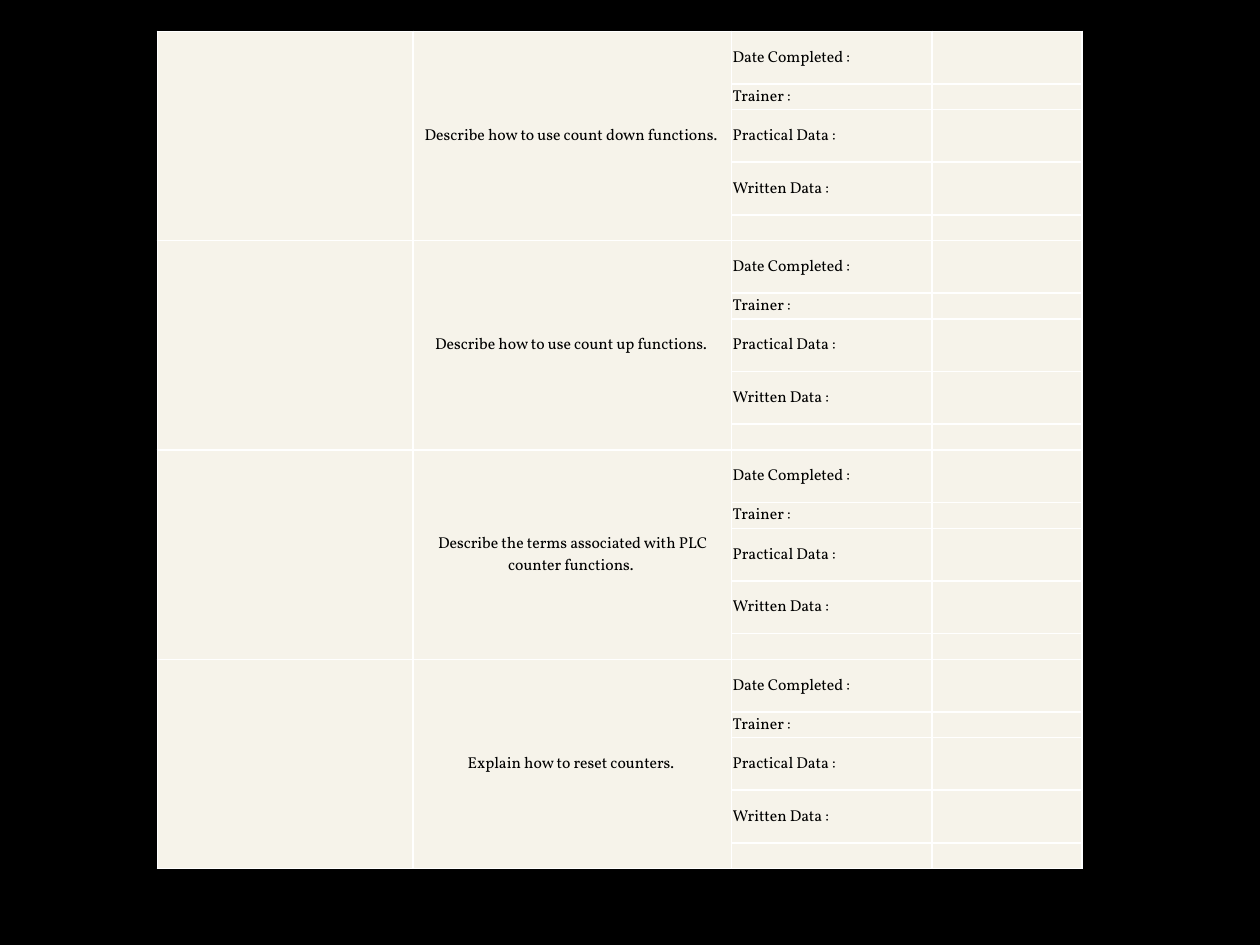
from lxml.etree import SubElement
from pptx import Presentation
from pptx.dml.color import RGBColor
from pptx.enum.text import MSO_ANCHOR, PP_ALIGN
from pptx.oxml import parse_xml
from pptx.oxml.ns import nsdecls, qn
from pptx.util import Cm, Pt

# Content
TASKS = [
    "Describe how to use count down functions. ",
    "Describe how to use count up functions. ",
    "Describe the terms associated with PLC counter functions. ",
    "Explain how to reset counters. ",
]
FIELDS = ["Date Completed :", "Trainer :", "Practical Data :", "Written Data :", ""]

# Style and measures
COLORS = {"back": "000000", "cell": "F6F3EA", "line": "FFFFFF", "text": "000000"}
FONT, SIZE = "Vollkorn", 9
COLS = [5.16, 6.42, 4.04, 3.02]
TALL, SHORT = 1.06, 0.52
ROWS = [TALL, SHORT, TALL, TALL, SHORT]  # one height per field
LEFT, TOP = 3.17, 0.63


def write(cell, text, size=SIZE, font=FONT, color=COLORS["text"], align=PP_ALIGN.LEFT):
    p = cell.text_frame.paragraphs[0]
    p.alignment = align
    if not text:  # keeps an empty cell from stretching its row
        SubElement(p._p, qn("a:endParaRPr"), sz=str(size * 100))
        return
    r = p.add_run()
    r.text = text
    r.font.size, r.font.name = Pt(size), font
    r.font.color.rgb = RGBColor.from_string(color)


def style_cell(cell):
    cell.margin_left = cell.margin_right = cell.margin_top = Cm(0.02)
    cell.margin_bottom = 0
    cell.vertical_anchor = MSO_ANCHOR.MIDDLE
    cell.fill.solid()
    cell.fill.fore_color.rgb = RGBColor.from_string(COLORS["cell"])
    tcPr = cell._tc.get_or_add_tcPr()
    for i, side in enumerate("LRTB"):  # borders come before the fill
        tcPr.insert(i, parse_xml(
            f'<a:ln{side} {nsdecls("a")} w="{Pt(1)}"><a:solidFill>'
            f'<a:srgbClr val="{COLORS["line"]}"/></a:solidFill></a:ln{side}>'))


prs = Presentation()
prs.slide_width, prs.slide_height = Cm(25.4), Cm(19.05)
s = prs.slides.add_slide(prs.slide_layouts[6])
s.background.fill.solid()
s.background.fill.fore_color.rgb = RGBColor.from_string(COLORS["back"])

# Table grid
heights = ROWS * len(TASKS)
table = s.shapes.add_table(len(heights), len(COLS), Cm(LEFT), Cm(TOP),
                           Cm(sum(COLS)), Cm(sum(heights))).table
table.first_row = table.horz_banding = False
for col, width in zip(table.columns, COLS):
    col.width = Cm(width)
for row, height in zip(table.rows, heights):
    row.height = Cm(height)
for cell in table.iter_cells():
    style_cell(cell)

# One block of rows per task
for t, task in enumerate(TASKS):
    first = t * len(FIELDS)
    last = first + len(FIELDS) - 1
    for c in (0, 1):
        table.cell(first, c).merge(table.cell(last, c))
    for i, field in enumerate(FIELDS):
        texts = ["", task if i == 0 else "", field, ""]
        for c, text in enumerate(texts):
            write(table.cell(first + i, c), text,
                  align=PP_ALIGN.CENTER if c == 1 else PP_ALIGN.LEFT)

prs.save("out.pptx")
